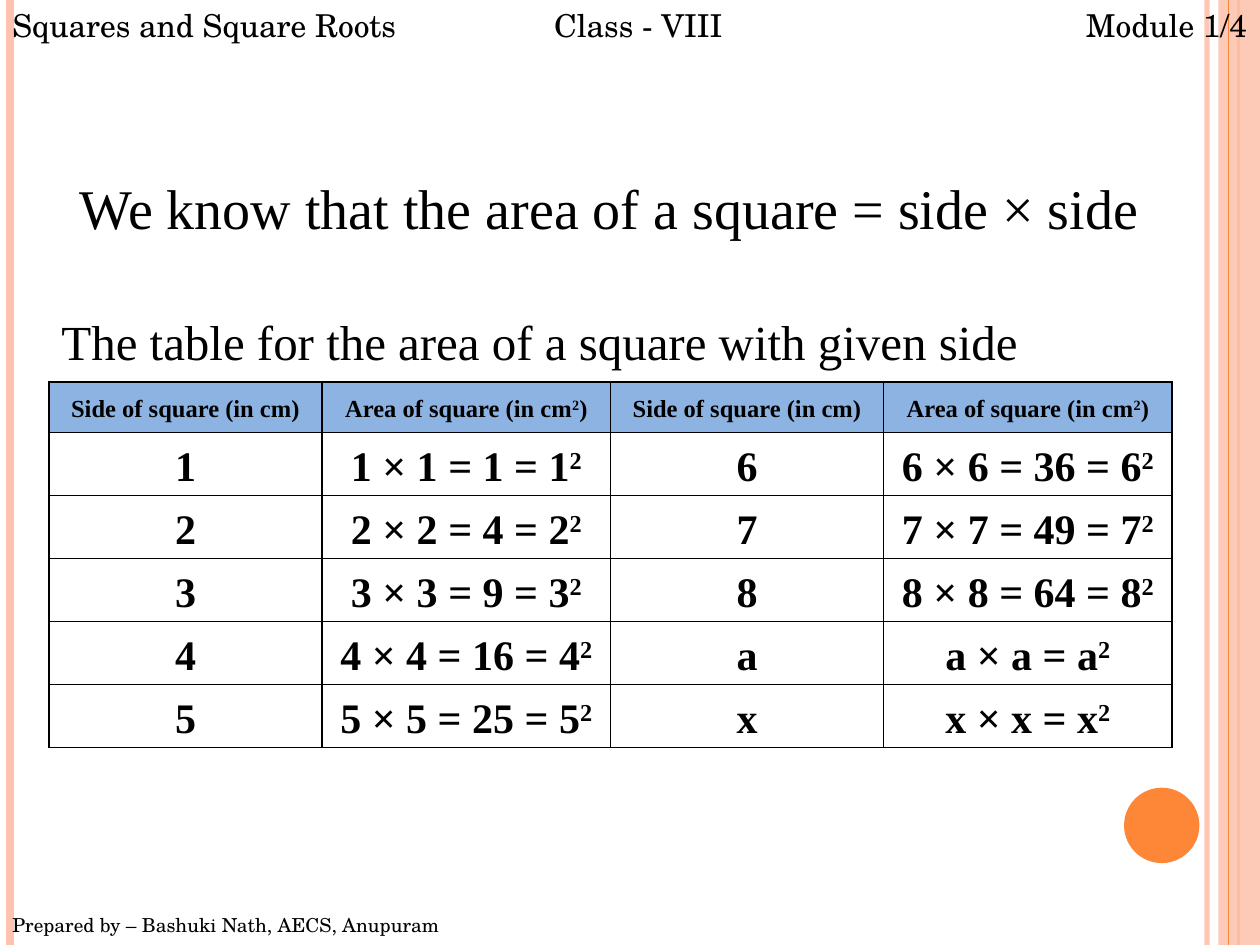
from dataclasses import dataclass

from lxml import etree
from pptx import Presentation
from pptx import util as u
from pptx.dml.color import RGBColor
from pptx.enum import shapes, text
from pptx.oxml import ns


@dataclass(frozen=True)
class Theme:
    ink: str = "000000"
    orange: str = "FE8637"
    peach: str = "FEC3AE"
    header_fill: str = "8DB3E2"
    serif: str = "Times New Roman"
    school: str = "TeX Gyre Schola"
    title_size: float = 32
    subtitle_size: float = 28
    cell_size: float = 24
    label_size: float = 18
    header_size: float = 14
    credit_size: float = 11


@dataclass(frozen=True)
class Stripe:
    x: float
    color: str
    width: float
    opacity: int = 100


@dataclass(frozen=True)
class Label:
    words: str
    left: float
    top: float
    width: float
    height: float
    size: float
    font: str
    wrap: bool = False


THEME = Theme()
WIDTH, HEIGHT = 25.4, 19.05

STRIPES = [
    Stripe(24.33, THEME.peach, 3, 93),
    Stripe(0.2, THEME.peach, 4.5),
    Stripe(24.97, THEME.orange, 1.5),
]
FRONT_STRIPE = Stripe(24.77, THEME.orange, 0.75)

LABELS = [
    Label("The table for the area of a square with given side",
          0.99, 6.15, 22.63, 1.45, THEME.subtitle_size, THEME.serif, True),
    Label("Module 1/4", 21.64, 0, 3.76, 1.02, THEME.label_size, THEME.school),
    Label("Squares and Square Roots", 0, 0, 8.53, 1.02, THEME.label_size, THEME.school),
    Label("Class - VIII", 10.92, 0, 3.96, 1.02, THEME.label_size, THEME.school),
    Label("Prepared by – Bashuki Nath, AECS, Anupuram",
          0, 18.29, 9.12, 0.74, THEME.credit_size, THEME.school),
]

HEADINGS = ["Side of square (in cm)", "Area of square (in cm²)"] * 2
COLUMN_WIDTHS = [5.5, 5.82] * 2
HEADER_HEIGHT, ROW_HEIGHT = 1.02, 1.27


def area(side: int | str) -> str:
    if isinstance(side, int):
        return f"{side} × {side} = {side * side} = {side}²"
    return f"{side} × {side} = {side}²"


def table_rows() -> list[list[str]]:
    pairs = zip([1, 2, 3, 4, 5], [6, 7, 8, "a", "x"])
    return [HEADINGS] + [
        [str(left), area(left), str(right), area(right)] for left, right in pairs
    ]


def write(frame, words: str, *, size: float, font: str, bold: bool = False,
          align=text.PP_ALIGN.LEFT, line_spacing: float = 1.0, gap: float = 0) -> None:
    paragraph = frame.paragraphs[0]
    paragraph.alignment = align
    paragraph.line_spacing = line_spacing
    paragraph.space_before = paragraph.space_after = u.Pt(gap)
    before, square, after = words.partition("²")
    for part, raised in ((before, False), ("2" if square else "", True), (after, False)):
        if not part:
            continue
        run = paragraph.add_run()
        run.text = part
        run.font.size = u.Pt(size)
        run.font.name = font
        run.font.bold = bold
        run.font.color.rgb = RGBColor.from_string(THEME.ink)
        if raised:
            run.font._element.set("baseline", "30000")


def set_opacity(element, percent: int) -> None:
    color = next(element.iter(ns.qn("a:srgbClr")))
    etree.SubElement(color, ns.qn("a:alpha")).set("val", str(percent * 1000))


def add_stripe(slide, stripe: Stripe) -> None:
    line = slide.shapes.add_connector(
        shapes.MSO_CONNECTOR.STRAIGHT,
        u.Cm(stripe.x), u.Cm(0), u.Cm(stripe.x), u.Cm(HEIGHT))
    line.line.color.rgb = RGBColor.from_string(stripe.color)
    line.line.width = u.Pt(stripe.width)
    properties = line._element.spPr
    if stripe.opacity < 100:
        set_opacity(properties, stripe.opacity)
    etree.SubElement(properties, ns.qn("a:effectLst"))


def add_plain_shape(slide, kind, left: float, top: float, width: float,
                    height: float, color: str):
    shape = slide.shapes.add_shape(
        kind, u.Cm(left), u.Cm(top), u.Cm(width), u.Cm(height))
    shape.shadow.inherit = False
    shape.fill.solid()
    shape.fill.fore_color.rgb = RGBColor.from_string(color)
    shape.line.fill.background()
    return shape


def add_label(slide, label: Label) -> None:
    box = slide.shapes.add_textbox(
        u.Cm(label.left), u.Cm(label.top), u.Cm(label.width), u.Cm(label.height))
    box.text_frame.word_wrap = label.wrap
    write(box.text_frame, label.words, size=label.size, font=label.font)


def add_borders(cell) -> None:
    properties = cell._tc.get_or_add_tcPr()
    for index, side in enumerate(("lnL", "lnR", "lnT", "lnB")):
        border = etree.Element(ns.qn(f"a:{side}"), w=str(u.Pt(1)))
        fill = etree.SubElement(border, ns.qn("a:solidFill"))
        etree.SubElement(fill, ns.qn("a:srgbClr")).set("val", THEME.ink)
        properties.insert(index, border)


def add_area_table(slide) -> None:
    rows = table_rows()
    height = HEADER_HEIGHT + ROW_HEIGHT * (len(rows) - 1)
    table = slide.shapes.add_table(
        len(rows), len(HEADINGS), u.Cm(0.99), u.Cm(7.7),
        u.Cm(sum(COLUMN_WIDTHS)), u.Cm(height)).table
    table.first_row = table.horz_banding = False
    for column, width in zip(table.columns, COLUMN_WIDTHS):
        column.width = u.Cm(width)
    for row_index, row in enumerate(rows):
        is_header = row_index == 0
        table.rows[row_index].height = u.Cm(HEADER_HEIGHT if is_header else ROW_HEIGHT)
        for column_index, words in enumerate(row):
            cell = table.cell(row_index, column_index)
            cell.margin_left = cell.margin_right = u.Cm(0.18)
            cell.margin_top = cell.margin_bottom = 0
            cell.vertical_anchor = text.MSO_ANCHOR.MIDDLE
            if is_header:
                cell.fill.solid()
                cell.fill.fore_color.rgb = RGBColor.from_string(THEME.header_fill)
            else:
                cell.fill.background()
            add_borders(cell)
            write(cell.text_frame, words, font=THEME.serif, bold=True,
                  size=THEME.header_size if is_header else THEME.cell_size,
                  align=text.PP_ALIGN.CENTER, line_spacing=1.15,
                  gap=0 if is_header else 3)


def add_title(slide) -> None:
    title = slide.shapes.title
    title.left, title.top = u.Cm(0.58), u.Cm(3.38)
    title.width, title.height = u.Cm(23.42), u.Cm(1.63)
    title.text_frame.auto_size = text.MSO_AUTO_SIZE.NONE
    title.text_frame.vertical_anchor = text.MSO_ANCHOR.TOP
    write(title.text_frame, "We know that the area of a square = side × side",
          size=THEME.title_size, font=THEME.serif, align=text.PP_ALIGN.CENTER)


def main() -> None:
    presentation = Presentation()
    presentation.slide_width, presentation.slide_height = u.Cm(WIDTH), u.Cm(HEIGHT)
    slide = presentation.slides.add_slide(presentation.slide_layouts[5])
    for stripe in STRIPES:
        add_stripe(slide, stripe)
    band = add_plain_shape(slide, shapes.MSO_SHAPE.RECTANGLE,
                           24.56, 0, 0.84, HEIGHT, THEME.peach)
    set_opacity(band._element.spPr, 87)
    add_stripe(slide, FRONT_STRIPE)
    add_plain_shape(slide, shapes.MSO_SHAPE.OVAL, 22.66, 15.88, 1.52, 1.52, THEME.orange)
    add_title(slide)
    add_area_table(slide)
    for label in LABELS:
        add_label(slide, label)
    presentation.save("out.pptx")


if __name__ == "__main__":
    main()
